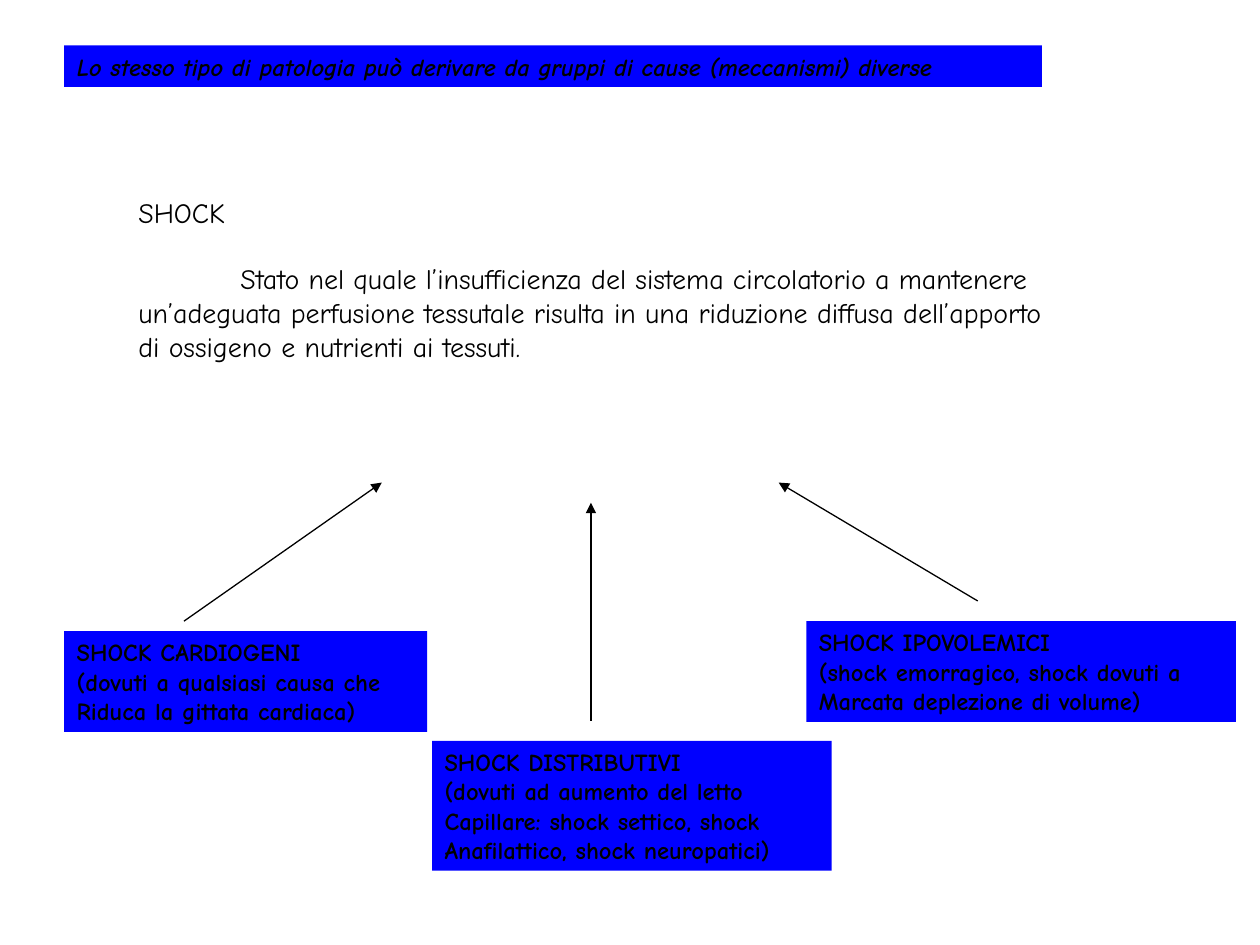
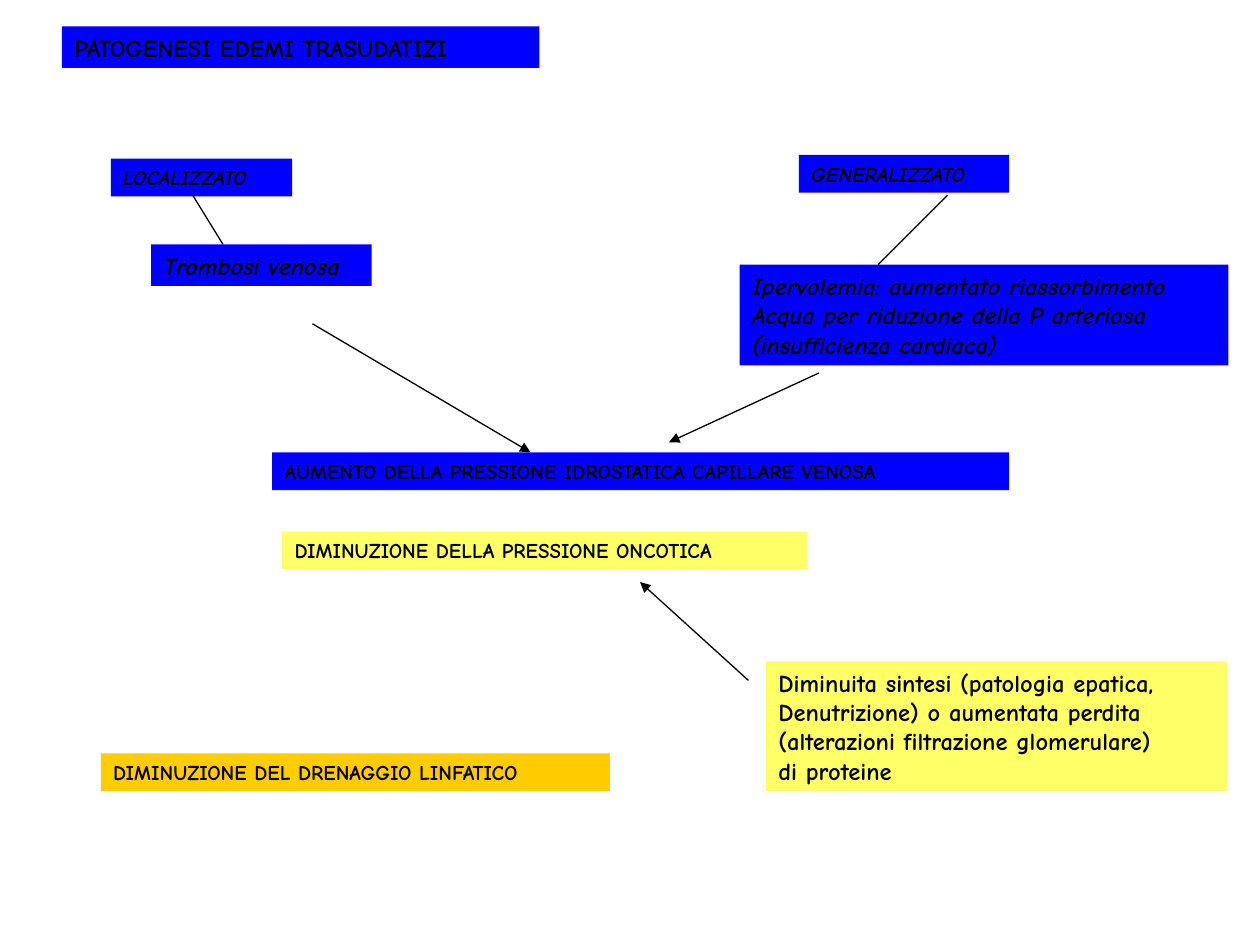
import pptx
import pptx.util
import pptx.dml.color
import pptx.enum.shapes
import pptx.enum.text
import pptx.oxml
import pptx.oxml.ns

Inches = pptx.util.Inches
Pt = pptx.util.Pt
BLUE, YELLOW, ORANGE, BLACK = "0000FF", "FFFF66", "FFCC00", "000000"
FONT = "Comic Neue"
TITLE_ONLY = 5
FRAME = {
    "word_wrap": True,
    "auto_size": pptx.enum.text.MSO_AUTO_SIZE.NONE,
    "vertical_anchor": pptx.enum.text.MSO_ANCHOR.TOP,
    "margin_left": Inches(0.1),
    "margin_right": Inches(0.1),
    "margin_top": Inches(0.05),
    "margin_bottom": Inches(0.05),
}


def rgb(value):
    return pptx.dml.color.RGBColor.from_string(value)


def set_attrs(obj, values):
    for name, value in values.items():
        setattr(obj, name, value)


def paint(fill, color):
    fill.solid()
    fill.fore_color.rgb = rgb(color)


def write(sp, lines, size, bold=True, italic=False):
    tf = sp.text_frame
    set_attrs(tf, FRAME)
    for i, line in enumerate(lines):
        p = tf.add_paragraph() if i else tf.paragraphs[0]
        p.alignment = pptx.enum.text.PP_ALIGN.LEFT
        r = p.add_run()
        r.text = line
        set_attrs(r.font, {"name": FONT, "size": Pt(size), "bold": bold, "italic": italic})
        r.font.color.rgb = rgb(BLACK)


def add_titled_slide(prs, title, left, top, width, italic=False):
    s = prs.slides.add_slide(prs.slide_layouts[TITLE_ONLY])
    sp = s.shapes.title
    set_attrs(sp, {"left": Inches(left), "top": Inches(top),
                   "width": Inches(width), "height": Inches(0.33)})
    paint(sp.fill, BLUE)
    write(sp, [title], 14, italic=italic)
    return s


def add_box(s, at, color, lines, size=14, italic=False):
    sp = s.shapes.add_shape(pptx.enum.shapes.MSO_SHAPE.RECTANGLE, *map(Inches, at))
    sp.shadow.inherit = False
    paint(sp.fill, color)
    sp.line.fill.background()
    write(sp, lines, size, italic=italic)


def add_line(s, start, end, arrow=True):
    cn = s.shapes.add_connector(pptx.enum.shapes.MSO_CONNECTOR.STRAIGHT,
                                *map(Inches, start + end))
    cn.line.width = Pt(0.75)
    paint(cn.line.fill, BLACK)
    if arrow:
        tail = pptx.oxml.parse_xml(
            f'<a:tailEnd {pptx.oxml.ns.nsdecls("a")} type="triangle"/>')
        cn.line.fill._xPr.append(tail)
    cn._element.spPr.append(
        pptx.oxml.parse_xml(f'<a:effectLst {pptx.oxml.ns.nsdecls("a")}/>'))


def add_definition(s, at, lines):
    sp = s.shapes.add_textbox(*map(Inches, at))
    write(sp, lines, 16, bold=False)
    p = sp.text_frame.paragraphs[1]
    p.space_before = Pt(19)
    p._p.get_or_add_pPr().set("indent", str(Inches(0.81)))


def build_shock(prs):
    s = add_titled_slide(
        prs, "Lo stesso tipo di patologia può derivare da gruppi di cause (meccanismi) diverse",
        0.51, 0.36, 7.76, italic=True)
    add_definition(s, (1, 1.5, 8.11, 1.44), [
        "SHOCK",
        "Stato nel quale l’insufficienza del sistema circolatorio a mantenere",
        "un’adeguata perfusione tessutale risulta in una riduzione diffusa dell’apporto",
        "di ossigeno e nutrienti ai tessuti."])
    causes = [
        ((0.51, 5.01, 2.88, 0.8),
         ["SHOCK CARDIOGENI", "(dovuti a qualsiasi causa che", "Riduca la gittata cardiaca)"],
         (1.46, 4.93), (3.03, 3.83)),
        ((3.43, 5.88, 3.17, 1.03),
         ["SHOCK DISTRIBUTIVI", "(dovuti ad aumento del letto",
          "Capillare: shock settico, shock", "Anafilattico, shock neuropatici)"],
         (4.69, 5.72), (4.69, 3.99)),
        ((6.4, 4.93, 3.41, 0.8),
         ["SHOCK IPOVOLEMICI", "(shock emorragico, shock dovuti a",
          "Marcata deplezione di volume)"],
         (7.76, 4.77), (6.18, 3.83)),
    ]
    for at, lines, start, end in causes:
        add_box(s, at, BLUE, lines)
        add_line(s, start, end)


def build_edema(prs):
    s = add_titled_slide(prs, "PATOGENESI EDEMI TRASUDATIZI", 0.49, 0.21, 3.79)
    mechanisms = [
        ((2.16, 3.59, 5.85, 0.3), BLUE, "AUMENTO DELLA PRESSIONE IDROSTATICA CAPILLARE VENOSA"),
        ((2.24, 4.22, 4.17, 0.3), YELLOW, "DIMINUZIONE DELLA PRESSIONE ONCOTICA"),
        ((0.8, 5.98, 4.04, 0.3), ORANGE, "DIMINUZIONE DEL DRENAGGIO LINFATICO"),
    ]
    for at, color, text in mechanisms:
        add_box(s, at, color, [text], size=12)

    add_box(s, (0.88, 1.26, 1.44, 0.3), BLUE, ["LOCALIZZATO"], size=12, italic=True)
    add_box(s, (6.34, 1.23, 1.67, 0.3), BLUE, ["GENERALIZZATO"], size=12, italic=True)
    add_box(s, (1.2, 1.94, 1.75, 0.33), BLUE, ["Trombosi venosa"], italic=True)
    add_box(s, (5.87, 2.1, 3.88, 0.8), BLUE,
            ["Ipervolemia: aumentato riassorbimento", "Acqua per riduzione della P arteriosa",
             "(insufficienza cardiaca)"], italic=True)
    add_box(s, (6.08, 5.25, 3.66, 1.03), YELLOW,
            ["Diminuita sintesi (patologia epatica,", "Denutrizione) o aumentata perdita",
             "(alterazioni filtrazione glomerulare)", "di proteine"])

    add_line(s, (1.53, 1.55), (1.77, 1.94), arrow=False)
    add_line(s, (7.52, 1.55), (6.97, 2.1), arrow=False)
    add_line(s, (2.48, 2.57), (4.21, 3.59))
    add_line(s, (6.5, 2.96), (5.31, 3.51))
    add_line(s, (5.94, 5.4), (5.08, 4.62))


def main():
    prs = pptx.Presentation()
    set_attrs(prs, {"slide_width": Inches(10), "slide_height": Inches(7.5)})
    build_shock(prs)
    build_edema(prs)
    prs.save("out.pptx")


if __name__ == "__main__":
    main()
